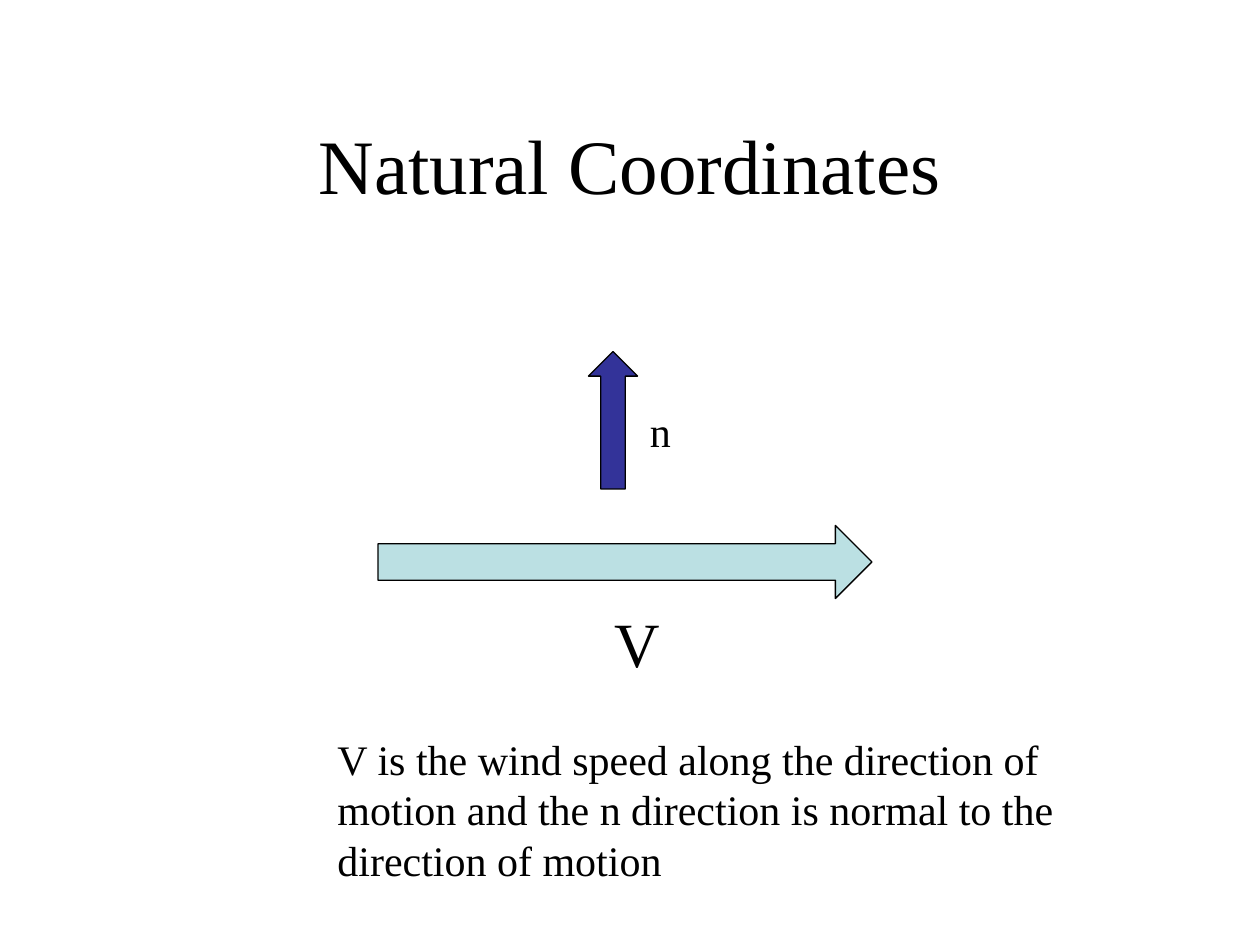
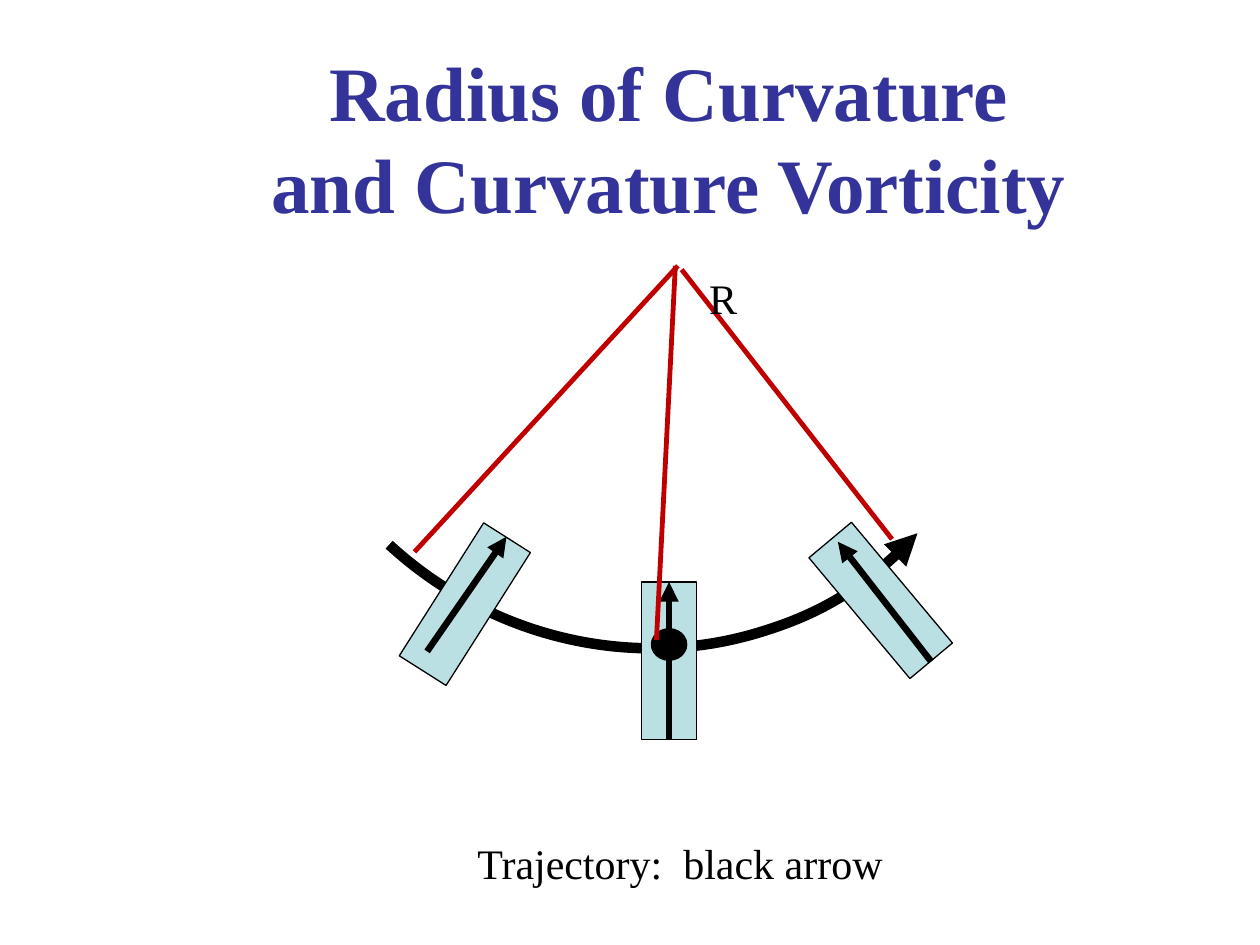
from dataclasses import dataclass

from lxml.etree import SubElement
from pptx import Presentation
from pptx.dml.color import RGBColor
from pptx.enum.shapes import MSO_CONNECTOR, MSO_SHAPE
from pptx.enum.text import MSO_ANCHOR, PP_ALIGN
from pptx.oxml.ns import qn
from pptx.shapes.autoshape import Shape
from pptx.shapes.connector import Connector
from pptx.slide import Slide
from pptx.util import Emu, Pt

SCALE = 9144  # EMU in a px, 100 px to the inch
FONT = "Times New Roman"
COLORS = {"ink": "000000", "pale": "BBE0E3", "navy": "333399", "red": "C00000"}
BAR_W, BAR_H = 44, 125


@dataclass
class Block:
    kind: MSO_SHAPE
    left: int
    top: int
    width: int
    height: int
    fill: str = ""
    turn: float = 0
    weight: float = 0.75


@dataclass
class Label:
    text: str
    left: int
    top: int
    width: int
    height: int
    size: int = 24
    wrap: bool = False


@dataclass
class Line:
    start: tuple[int, int]
    end: tuple[int, int]
    color: str = "red"
    weight: float = 2.75
    arrow: bool = False


def px(*sizes: int) -> list[Emu]:
    return [Emu(size * SCALE) for size in sizes]


def rgb(name: str) -> RGBColor:
    return RGBColor.from_string(COLORS[name])


def stroke(item: Shape | Connector, color: str, weight: float) -> None:
    item.line.color.rgb = rgb(color)
    item.line.width = Pt(weight)


def add_tip(item: Shape | Connector, side: str) -> None:
    """Put a triangle on the headEnd or tailEnd of an outline."""
    ln = item.element.spPr.find(qn("a:ln"))
    SubElement(ln, qn(f"a:{side}"), type="triangle")


def draw_block(slide: Slide, block: Block) -> Shape:
    shape = slide.shapes.add_shape(
        block.kind, *px(block.left, block.top, block.width, block.height))
    shape.shadow.inherit = False
    shape.rotation = block.turn
    if block.fill:
        shape.fill.solid()
        shape.fill.fore_color.rgb = rgb(block.fill)
    else:
        shape.fill.background()
    stroke(shape, "ink", block.weight)
    return shape


def draw_line(slide: Slide, line: Line) -> Connector:
    link = slide.shapes.add_connector(
        MSO_CONNECTOR.STRAIGHT, *px(*line.start, *line.end))
    stroke(link, line.color, line.weight)
    if line.arrow:
        add_tip(link, "tailEnd")
    SubElement(link.element.spPr, qn("a:effectLst"))
    return link


def draw_label(slide: Slide, label: Label, color: str = "ink", bold: bool = False) -> Shape:
    box = slide.shapes.add_textbox(
        *px(label.left, label.top, label.width, label.height))
    frame = box.text_frame
    frame.word_wrap = label.wrap
    part = frame.paragraphs[0]
    part.text = label.text
    style = {"name": FONT, "size": Pt(label.size), "bold": bold}
    for run in part.runs:
        for key, value in style.items():
            setattr(run.font, key, value)
        run.font.color.rgb = rgb(color)
    return box


def draw_title(slide: Slide, text: str, left: int, top: int,
               color: str = "ink", bold: bool = False) -> None:
    label = Label(text, left, top, 850, 125, 44, True)
    frame = draw_label(slide, label, color, bold).text_frame
    frame.vertical_anchor = MSO_ANCHOR.MIDDLE
    frame.paragraphs[0].alignment = PP_ALIGN.CENTER


def draw_axes(slide: Slide) -> None:
    draw_title(slide, "Natural Coordinates", 75, 67)
    for block in (
        Block(MSO_SHAPE.RIGHT_ARROW, 300, 417, 392, 58, "pale"),
        Block(MSO_SHAPE.UP_ARROW, 467, 279, 39, 109, "navy"),
    ):
        draw_block(slide, block)
    for label in (
        Label("V", 478, 475, 57, 71, 36),
        Label("n", 506, 317, 28, 50, wrap=True),
        Label("V is the wind speed along the direction of motion and the "
              "n direction is normal to the direction of motion",
              258, 577, 638, 131, wrap=True),
    ):
        draw_label(slide, label)


def draw_curve(slide: Slide) -> None:
    draw_title(slide, "Radius of Curvature\vand Curvature Vorticity",
               106, 46, "navy", True)
    curve = draw_block(slide, Block(MSO_SHAPE.ARC, 215, -84, 581, 605, turn=132.6, weight=6))
    add_tip(curve, "headEnd")
    bars = [
        draw_block(slide, Block(MSO_SHAPE.RECTANGLE, left, top, BAR_W, BAR_H, "pale", turn))
        for left, top, turn in ((347, 417, 32.4), (509, 462, 0), (677, 414, 320.1))
    ]
    draw_label(slide, Label("Trajectory:  black arrow", 369, 660, 345, 50))
    draw_block(slide, Block(MSO_SHAPE.OVAL, 517, 499, 28, 25, "ink"))

    winds = [
        draw_line(slide, Line(start, end, "ink", 3.75, True))
        for start, end in (
            ((739, 525), (665, 430)),
            ((531, 587), (531, 462)),
            ((339, 517), (402, 426)),
        )
    ]
    winds[1].begin_connect(bars[1], 2)
    winds[1].end_connect(bars[1], 0)

    for start, end in (
        ((329, 438), (538, 211)),
        ((521, 508), (536, 211)),
        ((708, 428), (541, 214)),
    ):
        draw_line(slide, Line(start, end))
    draw_label(slide, Label("R", 553, 211, 43, 50))


def main() -> None:
    deck = Presentation()
    deck.slide_width, deck.slide_height = px(1000, 750)
    for draw in (draw_axes, draw_curve):
        draw(deck.slides.add_slide(deck.slide_layouts[6]))
    deck.save("out.pptx")


if __name__ == "__main__":
    main()
